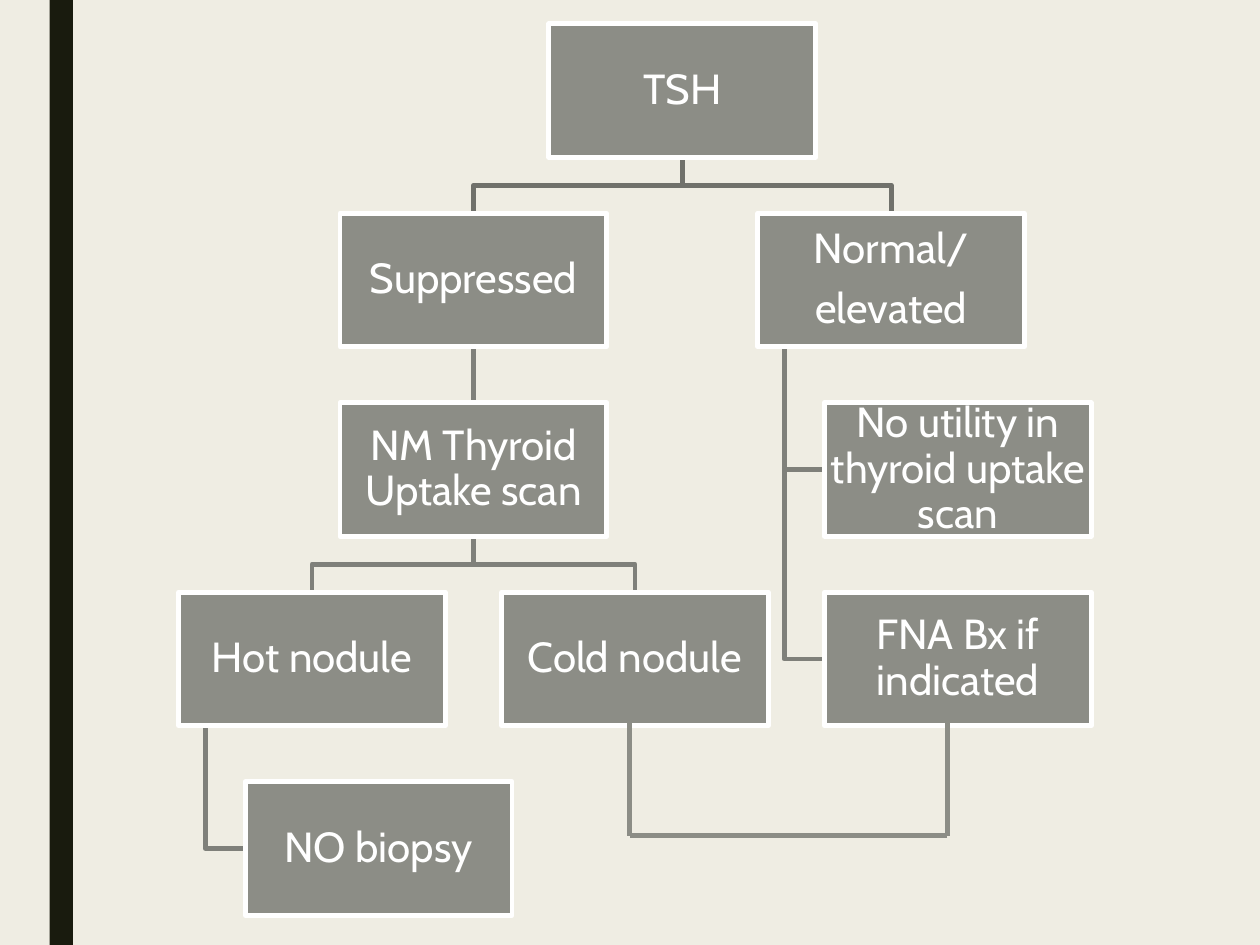
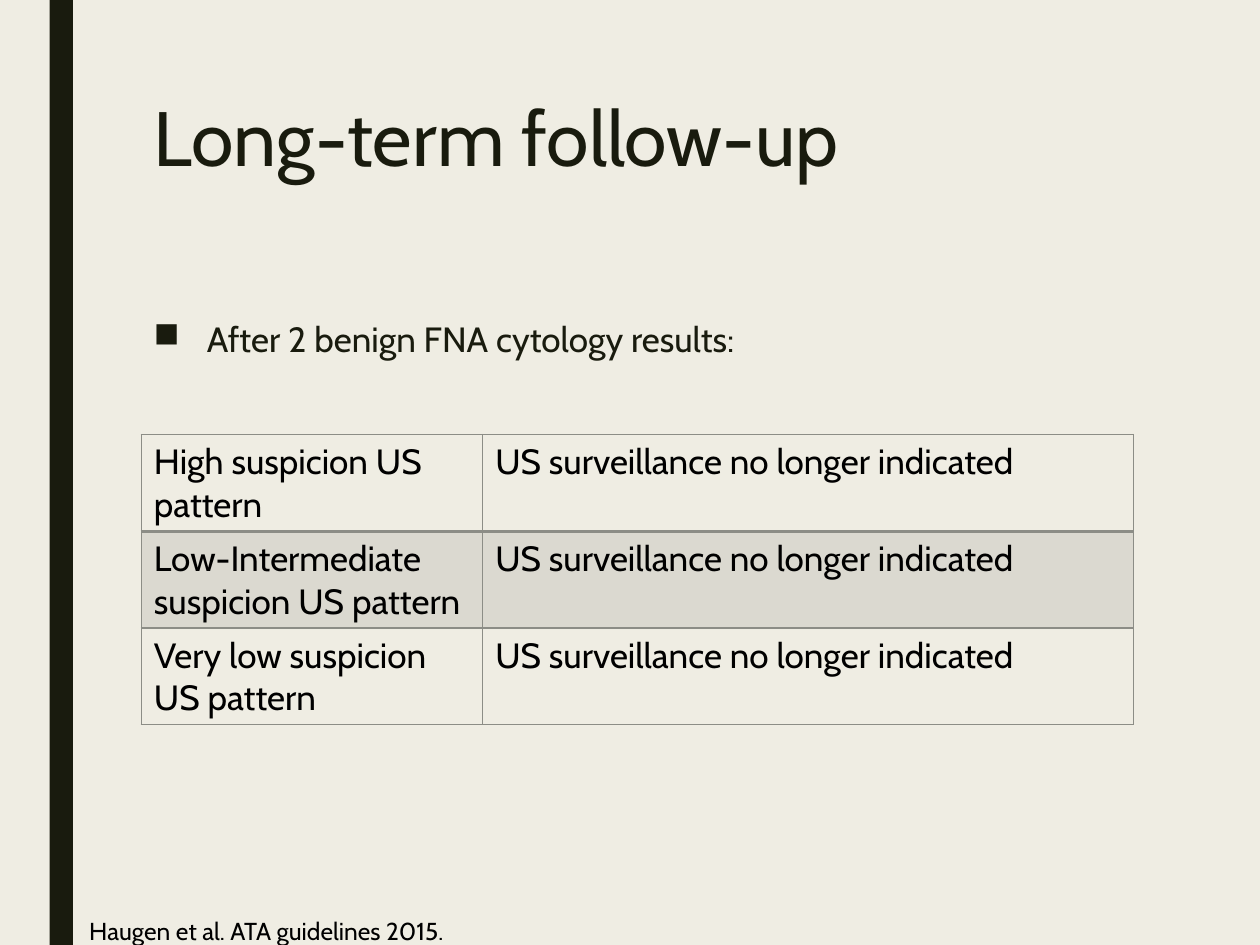
from collections import namedtuple
from dataclasses import dataclass

from lxml.etree import SubElement
from pptx import Presentation
from pptx.dml.color import RGBColor as RGB
from pptx.enum.shapes import MSO_CONNECTOR as CONN, MSO_SHAPE as SHAPE
from pptx.enum.text import MSO_ANCHOR as ANCHOR, PP_ALIGN as ALIGN
from pptx.oxml.ns import qn
from pptx.util import Cm, Pt

Box = namedtuple("Box", "x y w h")  # centimetres


@dataclass(frozen=True)
class Theme:
    font: str = "Cabin"
    paper: str = "EFEDE3"
    ink: str = "191B0E"
    black: str = "000000"
    white: str = "FFFFFF"
    grey: str = "8C8D86"
    link: str = "7F807A"
    root_link: str = "70716B"
    line: float = 2.75
    title: int = 44
    node: int = 24
    body: int = 20
    source: int = 14


T = Theme()
PAGE = Box(0, 0, 25.4, 19.05)

# Tree positions: column in node widths, row in levels.
HANG = 0.25
PITCH = 1.21
NODES = {
    "tsh": ("TSH", (PITCH * 2.5 - HANG) / 2, 0),
    "suppressed": ("Suppressed", PITCH / 2, 1),
    "scan": ("NM Thyroid Uptake scan", PITCH / 2, 2),
    "hot": ("Hot nodule", 0, 3),
    "no_biopsy": ("NO biopsy", HANG, 4),
    "cold": ("Cold nodule", PITCH, 3),
    "normal": ("Normal/\nelevated", PITCH * 2 - HANG, 1),
    "no_utility": ("No utility in thyroid uptake scan", PITCH * 2, 2),
    "fna": ("FNA Bx if indicated", PITCH * 2, 3),
}
FORKS = [("tsh", "suppressed", T.root_link), ("tsh", "normal", T.root_link),
         ("suppressed", "scan", T.link),
         ("scan", "hot", T.link), ("scan", "cold", T.link)]
HANGERS = [("normal", "no_utility"), ("normal", "fna"), ("hot", "no_biopsy")]

PATTERNS = ["High suspicion US pattern", "Low-Intermediate suspicion US pattern",
            "Very low suspicion US pattern"]
ADVICE = "US surveillance no longer indicated"


def cm(values):
    return [Cm(v) for v in values]


def apply(obj, formats):
    for name, value in formats.items():
        setattr(obj, name, value)


def write(tf, text, size, color, **para):
    """Fill a text frame with one paragraph per line of text."""
    for i, line in enumerate(text.split("\n")):
        p = tf.add_paragraph() if i else tf.paragraphs[0]
        apply(p, para)
        r = p.add_run()
        r.text = line
        apply(r.font, {"name": T.font, "size": Pt(size)})
        r.font.color.rgb = RGB.from_string(color)


def stroke(sp, color):
    sp.line.color.rgb = RGB.from_string(color)
    sp.line.width = Pt(T.line)


def add_rect(s, box, color):
    sp = s.shapes.add_shape(SHAPE.RECTANGLE, *cm(box))
    sp.shadow.inherit = False
    sp.fill.solid()
    sp.fill.fore_color.rgb = RGB.from_string(color)
    sp.line.fill.background()
    return sp


def add_text(s, box, text, size, color, **para):
    tf = s.shapes.add_textbox(*cm(box)).text_frame
    tf.word_wrap = True
    write(tf, text, size, color, **para)
    return tf


def add_line(s, start, end, color):
    c = s.shapes.add_connector(CONN.STRAIGHT, *cm(start + end))
    stroke(c, color)
    SubElement(c._element.spPr, qn("a:effectLst"))


def add_bend(s, points, color):
    """Draw one open outline through right-angled corners."""
    first, *rest = [cm(pt) for pt in points]
    fb = s.shapes.build_freeform(*first)
    fb.add_line_segments(rest, close=False)
    sp = fb.convert_to_shape()
    sp.shadow.inherit = False
    sp.fill.background()
    stroke(sp, color)


def add_slide(prs):
    s = prs.slides.add_slide(prs.slide_layouts[6])
    s.background.fill.solid()
    s.background.fill.fore_color.rgb = RGB.from_string(T.paper)
    add_rect(s, Box(1, 0, 0.47, PAGE.h), T.ink)
    return s


def add_node(s, box, text):
    sp = add_rect(s, box, T.grey)
    stroke(sp, T.white)
    tf = sp.text_frame
    sides = ("left", "top", "right", "bottom")
    apply(tf, {f"margin_{side}": Cm(0.05) for side in sides})
    apply(tf, {"word_wrap": True, "vertical_anchor": ANCHOR.MIDDLE})
    write(tf, text, T.node, T.white, alignment=ALIGN.CENTER,
          line_spacing=0.9, space_after=Pt(0.35 * T.node))


def add_fork(s, parent, child, color):
    """Link the bottom centre of a node to the top centre of its child."""
    x1, y1 = parent.x + parent.w / 2, parent.y + parent.h
    x2, y2 = child.x + child.w / 2, child.y
    mid = (y1 + y2) / 2
    if x1 == x2:
        add_line(s, (x1, y1), (x2, y2), color)
    else:
        add_bend(s, [(x1, y1), (x1, mid), (x2, mid), (x2, y2)], color)


def add_hanger(s, parent, child):
    """Link the lower left of a node to the left side of its child."""
    x, y = parent.x + 0.1 * parent.w, child.y + child.h / 2
    add_bend(s, [(x, parent.y + parent.h), (x, y), (child.x, y)], T.link)


def add_bracket(s, left, right):
    """Join two nodes of one row from below."""
    x1, x2 = left.x + 0.48 * left.w, right.x + 0.46 * right.w
    top = left.y + left.h - 0.15
    low = top + 2.37
    for start, end in [((x1, top), (x1, low)), ((x2, top), (x2, low)),
                       ((x2, low), (x1, low))]:
        add_line(s, start, end, T.grey)


def add_tree(s, area):
    w = area.w / (2 * PITCH + 1)
    h = w / 2
    step = (area.h - h) / max(row for _, _, row in NODES.values())
    boxes = {key: Box(area.x + col * w, area.y + row * step, w, h)
             for key, (_, col, row) in NODES.items()}
    for parent, child in HANGERS:
        add_hanger(s, boxes[parent], boxes[child])
    for parent, child, color in FORKS:
        add_fork(s, boxes[parent], boxes[child], color)
    for key, box in boxes.items():
        add_node(s, box, NODES[key][0])
    add_bracket(s, boxes["cold"], boxes["fna"])


def add_bullet(s, box, text):
    tf = add_text(s, box, text, T.body, T.ink, line_spacing=0.94,
                  space_after=Pt(2))
    for p in tf.paragraphs:
        pPr = p._p.get_or_add_pPr()
        pPr.set("marL", str(Cm(1.07)))
        pPr.set("indent", str(-Cm(1.07)))
        SubElement(pPr, qn("a:buChar"), char="■")


def add_color(parent, color, alpha=None):
    fill = SubElement(parent, qn("a:solidFill"))
    clr = SubElement(fill, qn("a:srgbClr"), val=color)
    if alpha:
        SubElement(clr, qn("a:alpha"), val=str(alpha * 1000))


def format_cell(cell, widths, shaded):
    """Set the borders (widths in points by side), then the fill."""
    tcPr = cell._tc.get_or_add_tcPr()
    for side, width in widths.items():
        ln = SubElement(tcPr, qn(f"a:ln{side}"), w=str(Pt(width)))
        add_color(ln, T.grey)
    if shaded:
        add_color(tcPr, T.grey, alpha=20)
    else:
        cell.fill.background()


def add_advice_table(s, box):
    n = len(PATTERNS)
    table = s.shapes.add_table(n, 2, *cm(box)).table
    apply(table, {"first_row": False, "horz_banding": False})
    first = 6.88
    for col, width in zip(table.columns, (first, box.w - first)):
        col.width = Cm(width)
    for i, pattern in enumerate(PATTERNS):
        table.rows[i].height = Cm(box.h / n)
        widths = {"L": 1, "R": 1, "T": 2 if i == 1 else 1,
                  "B": 2 if i == 0 else 1}
        for j, text in enumerate((pattern, ADVICE)):
            cell = table.cell(i, j)
            write(cell.text_frame, text, T.body, T.black)
            format_cell(cell, widths, shaded=i % 2 == 1)


def build_workup(prs):
    add_tree(add_slide(prs), Box(3.6, 0.48, 18.4, 17.97))


def build_follow_up(prs):
    s = add_slide(prs)
    x, w = 2.85, 20
    add_text(s, Box(x, 1.9, w, 4.12), "Long-term follow-up", T.title, T.ink,
             line_spacing=0.89)
    add_bullet(s, Box(x, 6.35, w, 9.95), "After 2 benign FNA cytology results:")
    add_advice_table(s, Box(x, 8.76, w, 5.85))
    add_text(s, Box(1.55, 18.34, 23.47, 0.86),
             "Haugen et al. ATA guidelines 2015.", T.source, T.black)


def main():
    prs = Presentation()
    apply(prs, {"slide_width": Cm(PAGE.w), "slide_height": Cm(PAGE.h)})
    build_workup(prs)
    build_follow_up(prs)
    prs.save("out.pptx")


if __name__ == "__main__":
    main()
